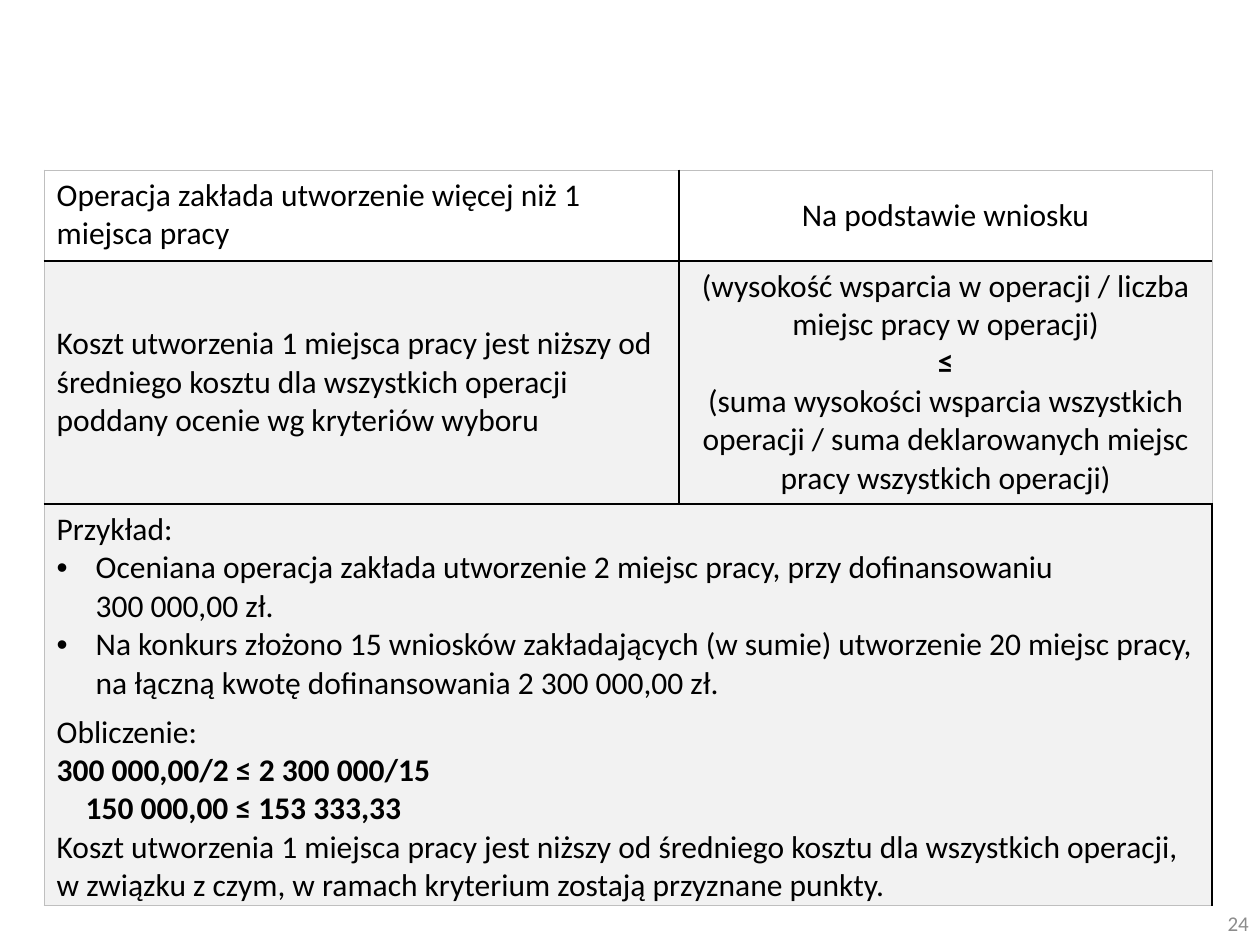
from pptx import Presentation
from pptx.dml.color import RGBColor
from pptx.enum.text import MSO_ANCHOR, PP_ALIGN
from pptx.oxml.ns import qn
from pptx.util import Inches, Pt
from lxml.etree import SubElement

BLACK, WHITE, PALE, GREY = "000000", "FFFFFF", "F2F2F2", "BFBFBF"


def colour(hex_string):
    return RGBColor.from_string(hex_string)


def write(frame, text, size=18, ink=BLACK, bold=False, align=PP_ALIGN.LEFT,
          before=0, indent=0, bullet=False, bold_line=None):
    """Add one paragraph; line breaks in the text become soft breaks."""
    first = frame.paragraphs[0]
    para = frame.add_paragraph() if first.runs else first
    para.alignment = align
    props = para._p.get_or_add_pPr()
    props.set("marL", str(Inches(indent)))
    props.set("indent", str(Inches(-indent if bullet else 0)))
    if before:
        para.space_before = Pt(before)
    if bullet:
        SubElement(props, qn("a:buFont")).set("typeface", "Arial")
        SubElement(props, qn("a:buChar")).set("char", "•")
    for number, line in enumerate(text.split("\n")):
        if number:
            para.add_line_break()
        span = para.add_run()
        span.text = line
        span.font.name = "Calibri"
        span.font.size = Pt(size)
        span.font.bold = bold or number == bold_line
        span.font.color.rgb = colour(ink)


def set_border(cell, side, ink, width):
    line = SubElement(cell._tc.get_or_add_tcPr(), qn("a:" + side), w=str(Pt(width)))
    fill = SubElement(line, qn("a:solidFill"))
    SubElement(fill, qn("a:srgbClr"), val=ink)


def style_cells(table):
    """Grey outer frame, black inner rules, pale rows below the first."""
    last_row, last_col = len(table.rows) - 1, len(table.columns) - 1
    for row in range(last_row + 1):
        for col in range(last_col + 1):
            cell = table.cell(row, col)
            outer = {"lnL": col == 0, "lnR": col == last_col,
                     "lnT": row == 0, "lnB": row == last_row}
            for side, is_outer in outer.items():
                set_border(cell, side, *((GREY, 0.5) if is_outer else (BLACK, 1)))
            cell.fill.solid()
            cell.fill.fore_color.rgb = colour(PALE if row else WHITE)
            cell.vertical_anchor = MSO_ANCHOR.MIDDLE


def add_criteria_table(page, left, top, width, height):
    table = page.shapes.add_table(3, 2, Inches(left), Inches(top),
                                  Inches(width), Inches(height)).table
    table.first_row = table.horz_banding = False
    for column, size in zip(table.columns, (5.04, width - 5.04)):
        column.width = Inches(size)
    for row, size in zip(table.rows, (0.72, 1.93, height - 2.65)):
        row.height = Inches(size)
    style_cells(table)
    table.cell(2, 0).merge(table.cell(2, 1))

    # Criteria and how they are checked
    table.cell(0, 0).vertical_anchor = MSO_ANCHOR.TOP
    write(table.cell(0, 0).text_frame,
          "Operacja zakłada utworzenie więcej niż 1 miejsca pracy")
    write(table.cell(0, 1).text_frame, "Na podstawie wniosku", align=PP_ALIGN.CENTER)
    write(table.cell(1, 0).text_frame,
          "Koszt utworzenia 1 miejsca pracy jest niższy od średniego kosztu "
          "dla wszystkich operacji poddany ocenie wg kryteriów wyboru")
    write(table.cell(1, 1).text_frame,
          "(wysokość wsparcia w operacji / liczba miejsc pracy w operacji)\n≤\n"
          "(suma wysokości wsparcia wszystkich operacji / suma deklarowanych "
          "miejsc pracy wszystkich operacji)", align=PP_ALIGN.CENTER, bold_line=1)

    # Worked example
    example = table.cell(2, 0).text_frame
    write(example, "Przykład:")
    for point in (
            "Oceniana operacja zakłada utworzenie 2 miejsc pracy, "
            "przy dofinansowaniu\n300 000,00 zł.",
            "Na konkurs złożono 15 wniosków zakładających (w sumie) utworzenie "
            "20 miejsc pracy, na łączną kwotę dofinansowania 2 300 000,00 zł."):
        write(example, point, indent=0.31, bullet=True)
    write(example, "Obliczenie:", before=6)
    write(example, "300 000,00/2 ≤ 2 300 000/15", bold=True)
    write(example, "150 000,00 ≤ 153 333,33", bold=True, indent=0.23)
    write(example, "Koszt utworzenia 1 miejsca pracy jest niższy od średniego kosztu "
          "dla wszystkich operacji,\nw związku z czym, w ramach kryterium zostają "
          "przyznane punkty.")


def add_page_number(page, left, top, width, height):
    box = page.shapes.add_textbox(Inches(left), Inches(top), Inches(width), Inches(height))
    box.text_frame.word_wrap = True
    box.text_frame.vertical_anchor = MSO_ANCHOR.MIDDLE
    write(box.text_frame, "24", size=12, ink="8C8C8C", align=PP_ALIGN.RIGHT)


def main():
    deck = Presentation()
    deck.slide_width, deck.slide_height = Inches(10), Inches(7.5)
    page = deck.slides.add_slide(deck.slide_layouts[6])
    add_page_number(page, 7.68, 7.13, 2.33, 0.4)
    add_criteria_table(page, 0.35, 1.35, 9.27, 5.78)
    deck.save("out.pptx")


if __name__ == "__main__":
    main()
